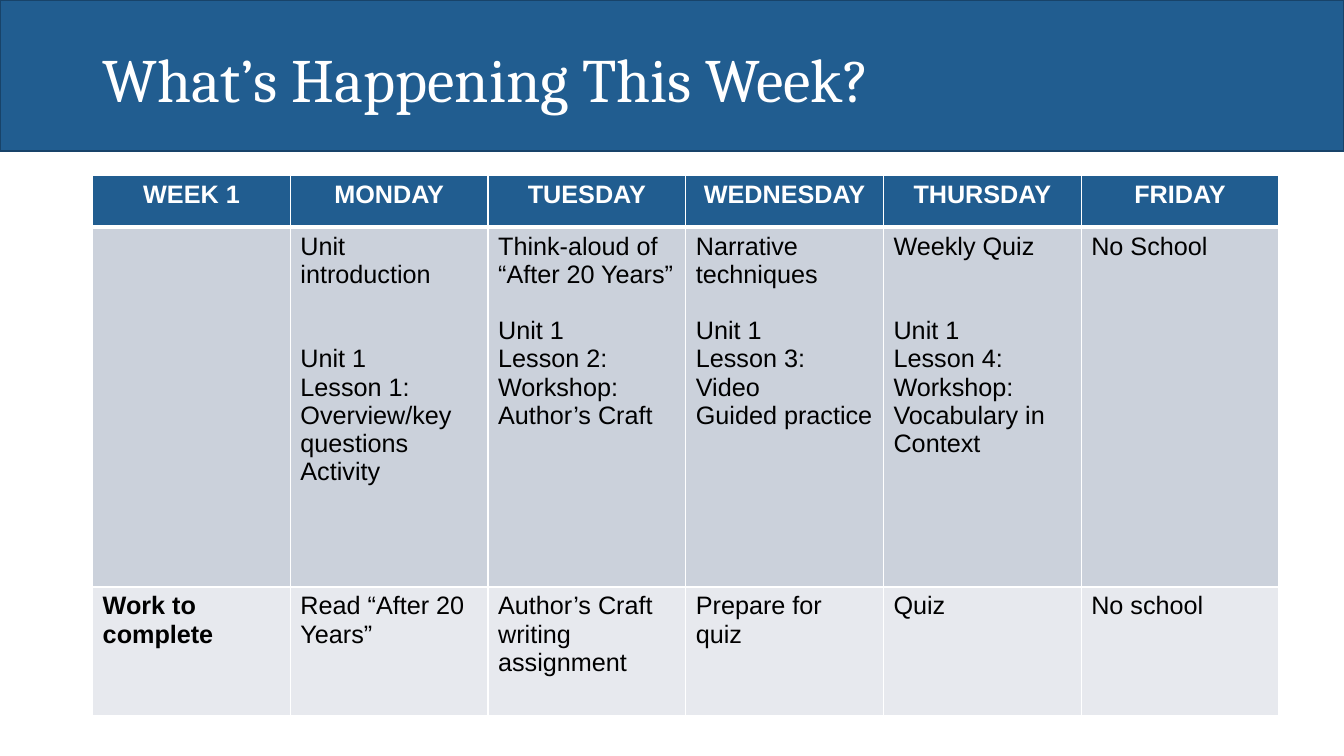
from dataclasses import dataclass

from lxml.etree import SubElement
from pptx import Presentation
from pptx.dml.color import RGBColor
from pptx.enum.shapes import MSO_SHAPE as Shape
from pptx.enum.text import MSO_ANCHOR as Anchor, PP_ALIGN as Align
from pptx.oxml.ns import qn
from pptx.slide import Slide
from pptx.table import Table, _Cell as Cell
from pptx.text.text import _Paragraph as Para
from pptx.util import Pt

BLUE = RGBColor(0x21, 0x5D, 0x90)
NAVY = RGBColor(0x18, 0x43, 0x69)
GREY = RGBColor(0xCB, 0xD1, 0xDB)
PALE = RGBColor(0xE7, 0xE9, 0xEE)
WHITE = RGBColor(0xFF, 0xFF, 0xFF)
BLACK = RGBColor(0, 0, 0)

WIDE, HIGH = 960, 540
LEFT = 66.2
LINE = 20.15
COL = 141.25


@dataclass(frozen=True)
class Day:
    name: str
    topic: str
    work: str
    skip: int = 0
    plan: tuple[str, ...] = ()


@dataclass(frozen=True)
class Row:
    high: float
    fill: RGBColor
    ink: RGBColor
    top: float
    base: float


DAYS = (
    Day("WEEK 1", "", "Work to complete"),
    Day("MONDAY", "Unit introduction", "Read “After 20 Years”", 2,
        ("Unit 1", "Lesson 1:", "Overview/key questions", "Activity")),
    Day("TUESDAY", "Think-aloud of “After 20 Years”",
        "Author’s Craft writing assignment", 1,
        ("Unit 1", "Lesson 2: Workshop:", "Author’s Craft")),
    Day("WEDNESDAY", "Narrative techniques", "Prepare for quiz", 1,
        ("Unit 1", "Lesson 3:", "Video", "Guided practice")),
    Day("THURSDAY", "Weekly Quiz", "Quiz", 2,
        ("Unit 1", "Lesson 4:", "Workshop:", "Vocabulary in Context")),
    Day("FRIDAY", "No School", "No school"),
)

ROWS = (
    Row(37, BLUE, WHITE, 1, 3),
    Row(257, GREY, BLACK, 3, 1),
    Row(92, PALE, BLACK, 1, 1),
)


def set_font(para: Para, face: str, size: float, ink: RGBColor,
             bold: bool = False) -> None:
    font = para.font
    font.name, font.size, font.bold = face, Pt(size), bold
    font.color.rgb = ink


def edge(cell: Cell, side: str, width: float) -> None:
    props = cell._tc.get_or_add_tcPr()
    line = SubElement(props, qn(f"a:ln{side}"), w=str(Pt(width)))
    fill = SubElement(line, qn("a:solidFill"))
    SubElement(fill, qn("a:srgbClr"), val=str(WHITE))


def draw_cell(cell: Cell, row: Row, lines: tuple[str, ...], skip: int,
              bold: bool, align: Align) -> None:
    for side, width in zip("LRTB", (1, 1, row.top, row.base)):
        edge(cell, side, width)
    cell.fill.solid()
    cell.fill.fore_color.rgb = row.fill
    frame = cell.text_frame
    frame.text = "\n".join(lines)
    for spot, para in enumerate(frame.paragraphs):
        set_font(para, "Arial", 18, row.ink, bold)
        para.alignment = align
        if spot == 1:
            para.space_before = Pt(skip * LINE)


def draw_day(table: Table, col: int, day: Day) -> None:
    table.columns[col].width = Pt(COL)
    texts = ((day.name,), (day.topic, *day.plan), (day.work,))
    for num, (row, lines) in enumerate(zip(ROWS, texts)):
        head = num == 0
        draw_cell(table.cell(num, col), row, lines, day.skip,
                  head or col == 0, Align.CENTER if head else Align.LEFT)


def draw_title(slide: Slide) -> None:
    band = slide.shapes.add_shape(Shape.RECTANGLE, 0, 0, Pt(WIDE), Pt(108))
    band.shadow.inherit = False
    band.fill.solid()
    band.fill.fore_color.rgb = BLUE
    band.line.color.rgb = NAVY
    band.line.width = Pt(1)
    box = slide.shapes.add_textbox(Pt(LEFT), Pt(9.4), Pt(828), Pt(98.6))
    frame = box.text_frame
    frame.word_wrap = True
    frame.vertical_anchor = Anchor.MIDDLE
    frame.text = "What’s Happening This Week?"
    para = frame.paragraphs[0]
    para.line_spacing = 0.9
    set_font(para, "Cambria", 44, WHITE)


def draw_week(slide: Slide) -> None:
    high = sum(row.high for row in ROWS)
    table = slide.shapes.add_table(
        len(ROWS), len(DAYS), Pt(LEFT), Pt(125.3),
        Pt(COL * len(DAYS)), Pt(high)).table
    table.horz_banding = False
    for num, row in enumerate(ROWS):
        table.rows[num].height = Pt(row.high)
    for col, day in enumerate(DAYS):
        draw_day(table, col, day)


def main() -> None:
    deck = Presentation()
    deck.slide_width, deck.slide_height = Pt(WIDE), Pt(HIGH)
    slide = deck.slides.add_slide(deck.slide_layouts[6])
    draw_title(slide)
    draw_week(slide)
    deck.save("out.pptx")


if __name__ == "__main__":
    main()
